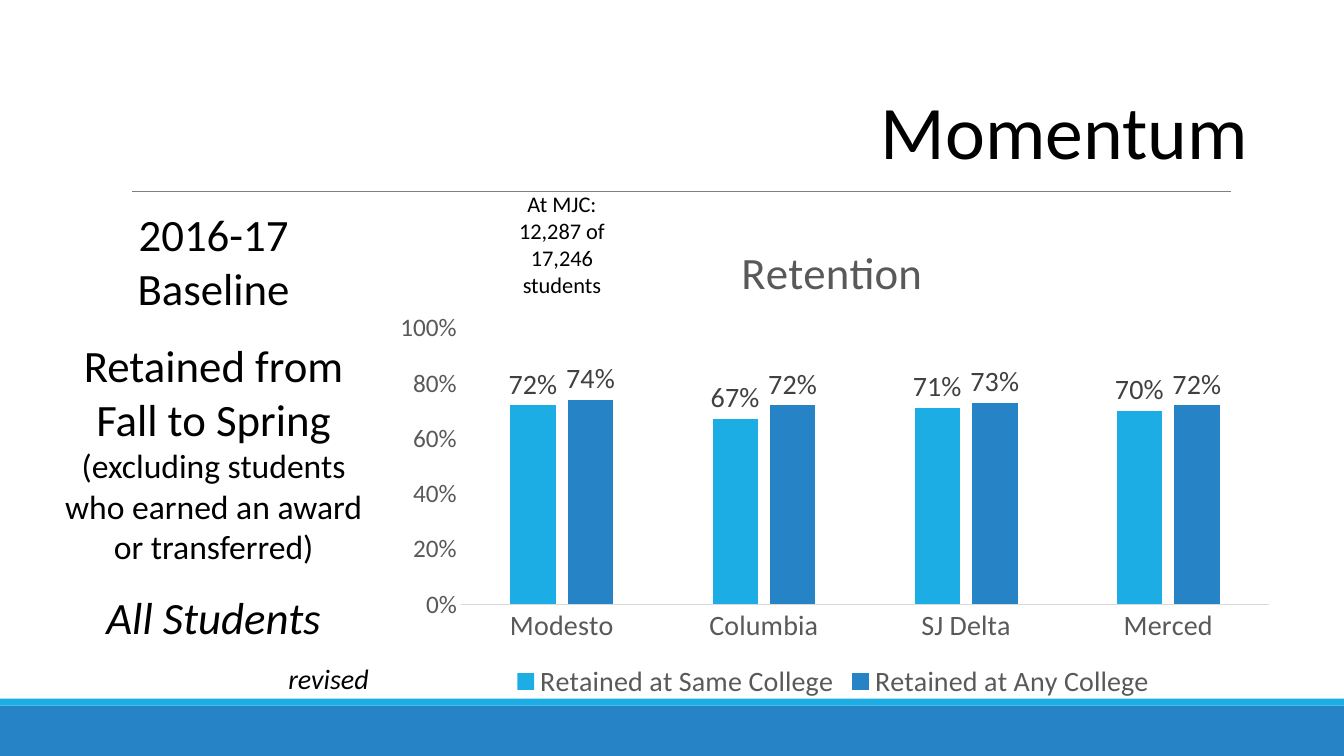
from dataclasses import dataclass

from lxml import etree
from pptx import Presentation
from pptx import util as u
from pptx.chart.data import CategoryChartData
from pptx.dml.color import RGBColor
from pptx.enum import chart as charts, shapes, text
from pptx.oxml import parse_xml
from pptx.oxml.ns import nsdecls, qn

COLORS = {"black": "000000", "cyan": "1CADE4", "blue": "2683C6", "rule": "808080",
          "gray": "595959", "label": "404040", "axis": "D9D9D9"}
FONT = "Calibri"
WIDTH, HEIGHT = u.Inches(13.33), u.Inches(7.5)


@dataclass
class Box:
    """Left, top, width and height as percentages of the slide's size."""
    left: float
    top: float
    width: float
    height: float

    def lengths(self) -> tuple[int, int, int, int]:
        return (round(WIDTH * self.left / 100), round(HEIGHT * self.top / 100),
                round(WIDTH * self.width / 100), round(HEIGHT * self.height / 100))


@dataclass
class Band:
    box: Box
    color: str


@dataclass
class Words:
    text: str
    size: float
    italic: bool = False


@dataclass
class Block:
    words: list[Words]
    space_before: float = 0
    align: text.PP_ALIGN = text.PP_ALIGN.CENTER


@dataclass
class Series:
    name: str
    values: list[float]
    color: str


BANDS = [Band(Box(0, 93.33, 100, 6.67), "blue"), Band(Box(0, 92.4, 100, 0.93), "cyan")]
RULE = Box(9.83, 25.33, 81.77, 0)
TITLE_BOX = Box(40.8, 10.4, 52.8, 13.47)
BODY_BOX = Box(3.6, 23.87, 24.6, 74.27)
NOTE_BOX = Box(36.75, 24.53, 10.13, 15.73)
CHART_BOX = Box(28.2, 26.8, 67.6, 66.4)

TITLE = [Block([Words("Momentum", 54)], align=text.PP_ALIGN.RIGHT)]
BODY = [
    Block([Words("2016-17 Baseline", 32)]),
    Block([Words("Retained from Fall to Spring ", 32),
           Words("(excluding students who earned an award or transferred)", 24)], 16.8),
    Block([Words("All Students", 32, True)], 16.8),
    Block([Words("revised", 20, True)], 12.6, text.PP_ALIGN.RIGHT),
]
NOTE = [Block([Words("At MJC: 12,287 of 17,246 students", 16)])]

COLLEGES = ["Modesto", "Columbia", "SJ Delta", "Merced"]
SERIES = [
    Series("Retained at Same College", [0.72, 0.67, 0.71, 0.70], "cyan"),
    Series("Retained at Any College", [0.74, 0.72, 0.73, 0.72], "blue"),
]


def rgb(name: str) -> RGBColor:
    return RGBColor.from_string(COLORS[name])


def style_font(font, size: float, color: str) -> None:
    font.name, font.size, font.bold = FONT, u.Pt(size), False
    font.color.rgb = rgb(color)


def place(shape, box: Box) -> None:
    shape.left, shape.top, shape.width, shape.height = box.lengths()


def write(shape, blocks: list[Block]) -> None:
    frame = shape.text_frame
    frame.word_wrap = True
    frame.auto_size = text.MSO_AUTO_SIZE.NONE
    for index, block in enumerate(blocks):
        paragraph = frame.add_paragraph() if index else frame.paragraphs[0]
        paragraph.alignment = block.align
        paragraph.space_before = u.Pt(block.space_before)
        properties = paragraph._p.get_or_add_pPr()
        properties.set("marL", "0")
        properties.set("indent", "0")
        etree.SubElement(properties, qn("a:buNone"))
        for words in block.words:
            run = paragraph.add_run()
            run.text = words.text
            style_font(run.font, words.size, "black")
            run.font.italic = words.italic


def draw_band(slide, band: Band) -> None:
    shape = slide.shapes.add_shape(shapes.MSO_SHAPE.RECTANGLE, *band.box.lengths())
    shape.shadow.inherit = False
    shape.fill.solid()
    shape.fill.fore_color.rgb = rgb(band.color)
    shape.line.fill.background()


def draw_rule(slide, box: Box) -> None:
    left, top, width, height = box.lengths()
    rule = slide.shapes.add_connector(shapes.MSO_CONNECTOR.STRAIGHT,
                                      left, top, left + width, top + height)
    rule.line.color.rgb = rgb("rule")
    rule.line.width = u.Pt(0.5)
    etree.SubElement(rule._element.spPr, qn("a:effectLst"))


def manual_layout(inner: bool, **shares: float):
    target = '<c:layoutTarget val="inner"/>' if inner else ""
    modes = "".join(f'<c:{key}Mode val="edge"/>' for key in "xy")
    sizes = "".join(f'<c:{key} val="{share}"/>' for key, share in shares.items())
    return parse_xml(f'<c:layout {nsdecls("c")}><c:manualLayout>{target}{modes}{sizes}'
                     "</c:manualLayout></c:layout>")


def set_layout(element, layout, index: int) -> None:
    for old in element.findall(qn("c:layout")):
        element.remove(old)
    element.insert(index, layout)


def draw_chart(slide, box: Box) -> None:
    data = CategoryChartData(number_format="0%")
    data.categories = COLLEGES
    for series in SERIES:
        data.add_series(series.name, series.values)
    chart = slide.shapes.add_chart(charts.XL_CHART_TYPE.COLUMN_CLUSTERED,
                                   *box.lengths(), data).chart
    style_font(chart.font, 10, "black")

    # Title and legend
    chart.has_title = True
    title = chart.chart_title
    title.text_frame.text = "Retention"
    style_font(title.text_frame.paragraphs[0].runs[0].font, 32, "gray")
    title.include_in_layout = False
    set_layout(title._element, manual_layout(False, x=0.39, y=0.06), 1)
    chart.has_legend = True
    chart.legend.position = charts.XL_LEGEND_POSITION.BOTTOM
    chart.legend.include_in_layout = False
    style_font(chart.legend.font, 20, "gray")

    # Axes
    for axis, size in ((chart.category_axis, 20), (chart.value_axis, 18)):
        style_font(axis.tick_labels.font, size, "gray")
        axis.major_tick_mark = axis.minor_tick_mark = charts.XL_TICK_MARK.NONE
        axis.has_major_gridlines = False
    chart.category_axis.format.line.color.rgb = rgb("axis")
    chart.category_axis.format.line.width = u.Pt(0.75)
    values = chart.value_axis
    values.format.line.fill.background()
    values.minimum_scale, values.maximum_scale, values.major_unit = 0, 1, 0.2
    values.tick_labels.number_format = "0%"
    values.tick_labels.number_format_is_linked = False

    # Columns and their labels
    plot = chart.plots[0]
    plot.gap_width, plot.overlap, plot.vary_by_categories = 219, -27, False
    for column, series in zip(plot.series, SERIES):
        column.format.fill.solid()
        column.format.fill.fore_color.rgb = rgb(series.color)
        labels = column.data_labels
        labels.show_value = True
        labels.position = charts.XL_LABEL_POSITION.OUTSIDE_END
        labels.number_format, labels.number_format_is_linked = "0%", False
        style_font(labels.font, 20, "label")
    plot_area = chart._chartSpace.chart.plotArea
    set_layout(plot_area, manual_layout(True, x=0.09, y=0.25, w=0.89, h=0.55), 0)


def main() -> None:
    presentation = Presentation()
    presentation.slide_width, presentation.slide_height = WIDTH, HEIGHT
    slide = presentation.slides.add_slide(presentation.slide_layouts[1])

    # Bands and rule
    for band in BANDS:
        draw_band(slide, band)
    draw_rule(slide, RULE)

    # Title and list
    title, body = slide.shapes.title, slide.placeholders[1]
    place(title, TITLE_BOX)
    write(title, TITLE)
    place(body, BODY_BOX)
    body.text_frame.margin_top = u.Inches(0.26)
    write(body, BODY)

    # Chart and its note
    draw_chart(slide, CHART_BOX)
    write(slide.shapes.add_textbox(*NOTE_BOX.lengths()), NOTE)
    presentation.save("out.pptx")


if __name__ == "__main__":
    main()
